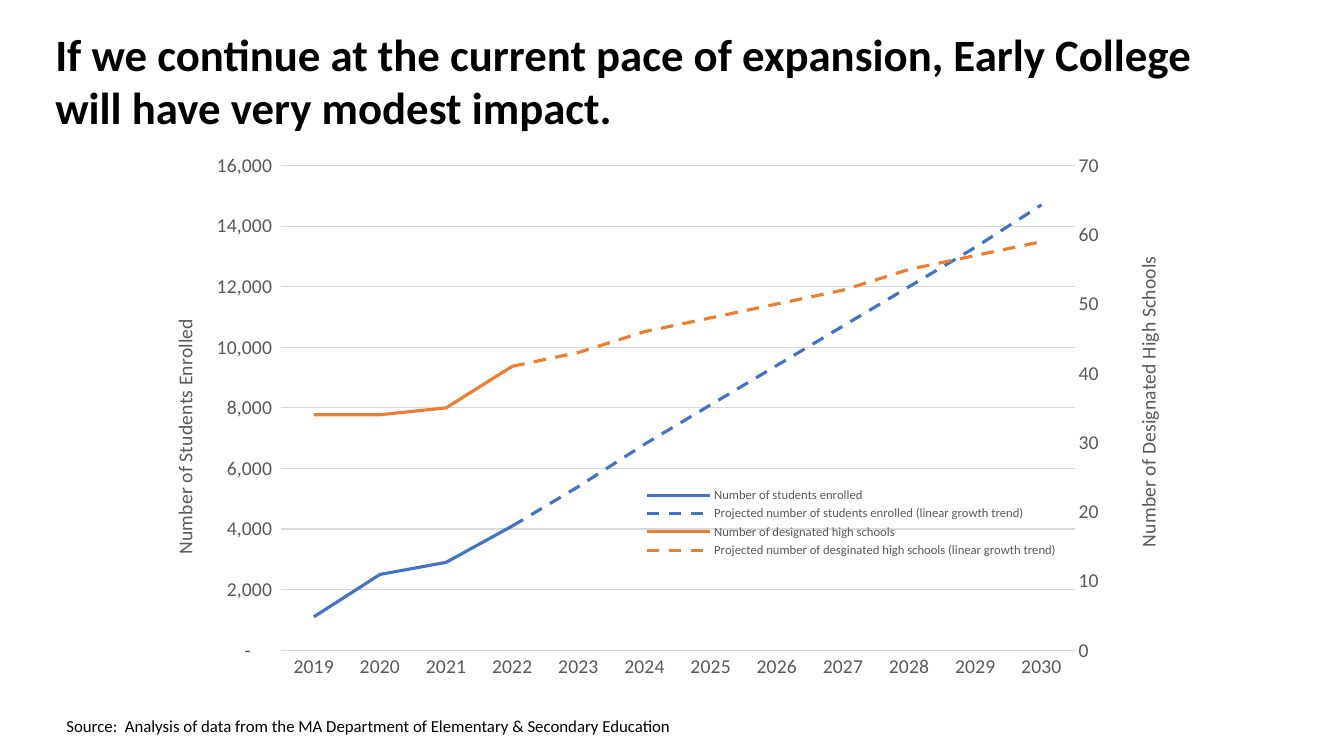
from copy import deepcopy
from dataclasses import dataclass

from lxml import etree
from pptx import Presentation
from pptx import util as u
from pptx.chart import axis as ax
from pptx.chart import data as cd
from pptx.dml import color
from pptx.enum import chart as ec
from pptx.enum import dml, text
from pptx.oxml import ns

FONT = "Calibri"
GREY, RULE, BLUE, ORANGE = "595959", "D9D9D9", "4472C4", "ED7D31"
YEARS = range(2019, 2031)
RIGHT_CAT_ID, RIGHT_VAL_ID = "50010", "50020"


@dataclass
class Trend:
    name: str
    first_year: int
    values: list[int]
    colour: str
    dashed: bool = False


@dataclass
class Scale:
    title: str
    top: int
    step: int
    number_format: str
    title_x: float
    title_y: float


@dataclass
class Label:
    text: str
    box: tuple[float, float, float, float]
    font: dict
    wrap: bool
    anchor: text.MSO_ANCHOR
    auto_size: text.MSO_AUTO_SIZE


TRENDS = [
    Trend("Number of students enrolled", 2019, [1100, 2500, 2900, 4100], BLUE),
    Trend("Projected number of students enrolled (linear growth trend)", 2022,
          [4100, 5400, 6800, 8100, 9400, 10700, 12000, 13300, 14700], BLUE, True),
    Trend("Number of designated high schools", 2019, [34, 34, 35, 41], ORANGE),
    Trend("Projected number of desginated high schools (linear growth trend)", 2022,
          [41, 43, 46, 48, 50, 52, 55, 57, 59], ORANGE, True),
]
STUDENTS = Scale("Number of Students Enrolled", 16000, 2000,
                 '_(* #,##0_);_(* \\(#,##0\\);_(* "-"??_);_(@_)', 0.016, 0.41)
SCHOOLS = Scale("Number of Designated High Schools", 70, 10, "General", 0.96, 0.32)
LABELS = [
    Label("If we continue at the current pace of expansion, Early College "
          "will have very modest impact.", (0.45, 0.19, 11.72, 1.21),
          {"size": u.Pt(32), "bold": True}, True,
          text.MSO_ANCHOR.MIDDLE, text.MSO_AUTO_SIZE.NONE),
    Label("Source:  Analysis of data from the MA Department of Elementary & "
          "Secondary Education", (0.56, 7.05, 6.22, 0.3),
          {"size": u.Pt(12)}, False,
          text.MSO_ANCHOR.TOP, text.MSO_AUTO_SIZE.SHAPE_TO_FIT_TEXT),
]


def rgb(value: str) -> color.RGBColor:
    return color.RGBColor.from_string(value)


def set_font(font, colour: str, **values) -> None:
    for name, value in {"name": FONT, **values}.items():
        setattr(font, name, value)
    font.color.rgb = rgb(colour)


def set_line(line, colour: str, width: float) -> None:
    line.color.rgb = rgb(colour)
    line.width = u.Pt(width)


def set_layout(before, inner: bool = False, **fractions: float) -> None:
    """Put a manual layout ahead of the given chart element."""
    parent = before.getparent()
    for old in parent.findall(ns.qn("c:layout")):
        parent.remove(old)
    layout = etree.Element(ns.qn("c:layout"))
    manual = etree.SubElement(layout, ns.qn("c:manualLayout"))
    items = {"layoutTarget": "inner"} if inner else {}
    items |= {"xMode": "edge", "yMode": "edge", **fractions}
    for tag, value in items.items():
        etree.SubElement(manual, ns.qn(f"c:{tag}"), val=str(value))
    before.addprevious(layout)


def style_scale(axis: ax.ValueAxis, scale: Scale) -> None:
    values = {"minimum_scale": 0, "maximum_scale": scale.top, "major_unit": scale.step,
              "major_tick_mark": ec.XL_TICK_MARK.NONE, "has_title": True}
    for name, value in values.items():
        setattr(axis, name, value)
    axis.format.line.fill.background()
    axis.tick_labels.number_format = scale.number_format
    axis.tick_labels.number_format_is_linked = False
    set_font(axis.tick_labels.font, GREY, size=u.Pt(14))
    tf = axis.axis_title.text_frame
    r = tf.paragraphs[0].add_run()
    r.text = scale.title
    set_font(r.font, GREY, size=u.Pt(14), bold=False)
    title = axis.axis_title._element
    body = title.find(".//" + ns.qn("a:bodyPr"))
    body.set("rot", "-5400000")
    body.set("vert", "horz")
    set_layout(title.find(ns.qn("c:overlay")), x=scale.title_x, y=scale.title_y)


def add_right_axis(chart) -> ax.ValueAxis:
    """Move the last two series to a second line plot with its own axes."""
    left_plot = chart.plots[0]._element
    right_plot = deepcopy(left_plot)
    ser = ns.qn("c:ser")
    for plot, unwanted in ((left_plot, slice(2, None)), (right_plot, slice(0, 2))):
        for s in plot.findall(ser)[unwanted]:
            plot.remove(s)
    left_plot.addnext(right_plot)
    ids = (RIGHT_CAT_ID, RIGHT_VAL_ID)
    for tag, axis_id in zip(right_plot.findall(ns.qn("c:axId")), ids):
        tag.set("val", axis_id)
    cat, val = (deepcopy(a._element) for a in (chart.category_axis, chart.value_axis))
    for axis, own, other in ((cat, *ids), (val, *reversed(ids))):
        axis.find(ns.qn("c:axId")).set("val", own)
        axis.find(ns.qn("c:crossAx")).set("val", other)
    val.find(ns.qn("c:axPos")).set("val", "r")
    val.find(ns.qn("c:crosses")).set("val", "max")
    chart.value_axis._element.addnext(val)
    val.addnext(cat)
    ax.CategoryAxis(cat).visible = False
    right = ax.ValueAxis(val)
    right.has_major_gridlines = False
    return right


def add_trend_chart(s) -> None:
    data = cd.CategoryChartData()
    data.categories = [str(year) for year in YEARS]
    for trend in TRENDS:
        known = dict(enumerate(trend.values, trend.first_year))
        data.add_series(trend.name, [known.get(year) for year in YEARS])
    box = map(u.Inches, (1.5, 0.31, 10.12, 6.87))
    chart = s.shapes.add_chart(ec.XL_CHART_TYPE.LINE, *box, data).chart
    chart.has_title = False
    set_font(chart.font, "000000", size=u.Pt(10))
    for series, trend in zip(chart.plots[0].series, TRENDS):
        series.smooth = False
        set_line(series.format.line, trend.colour, 2.25)
        if trend.dashed:
            series.format.line.dash_style = dml.MSO_LINE.DASH

    years, left = chart.category_axis, chart.value_axis
    years.major_tick_mark = ec.XL_TICK_MARK.NONE
    set_line(years.format.line, RULE, 0.75)
    set_font(years.tick_labels.font, GREY, size=u.Pt(14))
    right = add_right_axis(chart)
    style_scale(left, STUDENTS)
    style_scale(right, SCHOOLS)
    set_line(left.major_gridlines.format.line, RULE, 0.75)
    set_layout(chart.plots[0]._element, inner=True, x=0.127, y=0.194, w=0.778, h=0.7)

    chart.has_legend = True
    legend = chart.legend
    legend.position = ec.XL_LEGEND_POSITION.BOTTOM
    legend.include_in_layout = False
    set_font(legend.font, GREY, size=u.Pt(9))
    set_layout(legend._element.find(ns.qn("c:overlay")), x=0.476, y=0.655, w=0.42, h=0.11)


def add_label(s, label: Label) -> None:
    tf = s.shapes.add_textbox(*map(u.Inches, label.box)).text_frame
    tf.word_wrap = label.wrap
    tf.auto_size = label.auto_size
    tf.vertical_anchor = label.anchor
    r = tf.paragraphs[0].add_run()
    r.text = label.text
    set_font(r.font, "000000", **label.font)


def main() -> None:
    prs = Presentation()
    prs.slide_width, prs.slide_height = u.Inches(13.33), u.Inches(7.5)
    s = prs.slides.add_slide(prs.slide_layouts[6])
    add_trend_chart(s)
    for label in LABELS:
        add_label(s, label)
    prs.save("out.pptx")


if __name__ == "__main__":
    main()
